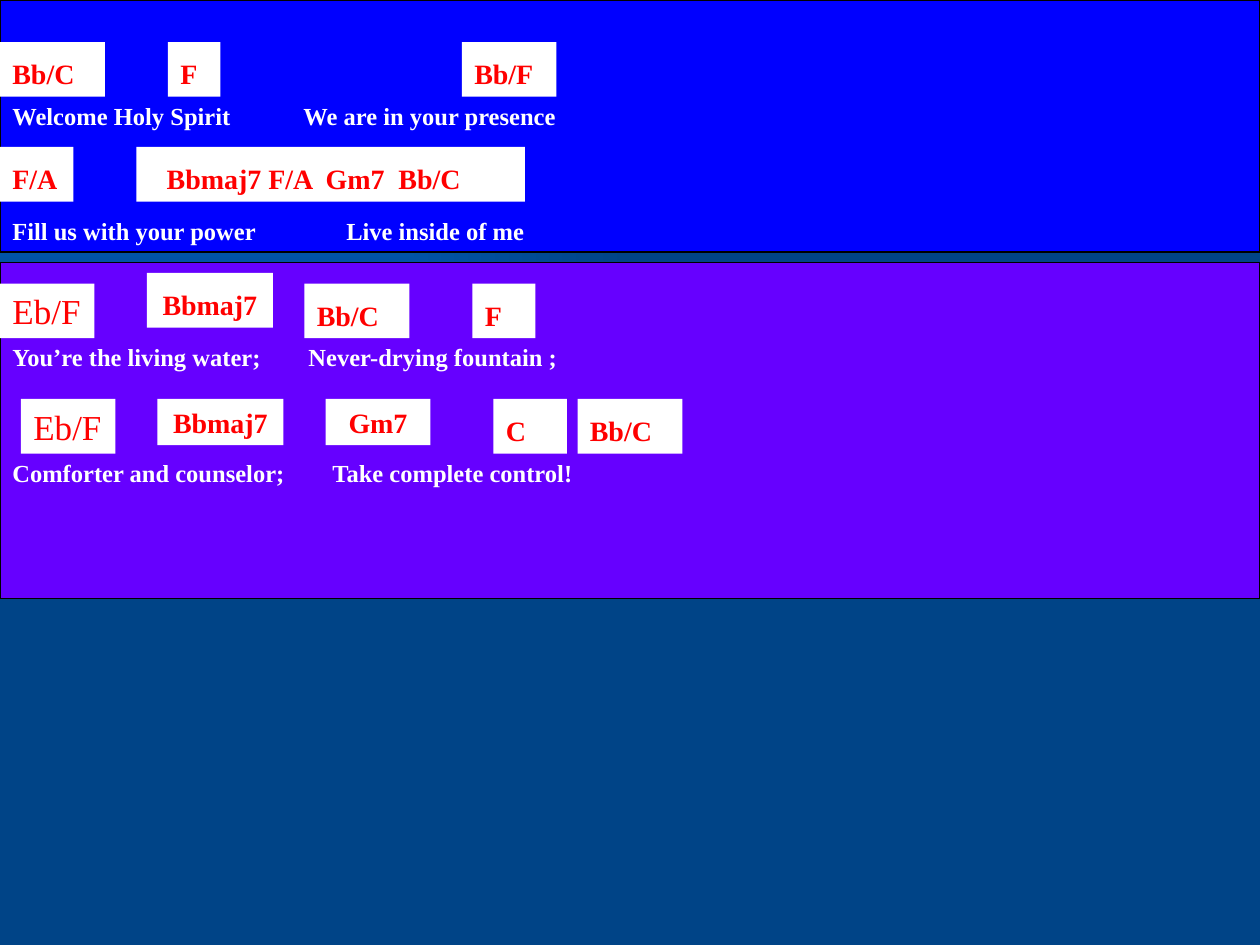
from lxml import etree
from pptx import Presentation, util as u
from pptx.dml.color import RGBColor
from pptx.enum import shapes, text
from pptx.oxml import ns

COLORS = {
    "glow": "0066CC", "deep": "004487", "verse": "0000FF", "chorus": "6600FF",
    "box": "FFFFFF", "chord": "FF0000", "lyric": "FFFFFF", "outline": "000000",
}
COLUMNS, ROWS = 120, 90
TALL, LOW = 5.2, 4.4  # chord box heights in rows


def color(name):
    return RGBColor.from_string(COLORS[name])


def add_xml(parent, tag, **attributes):
    return etree.SubElement(parent, ns.qn(tag), attributes)


class SongSlide:
    font = "Times New Roman"

    def __init__(self, presentation):
        self.slide = presentation.slides.add_slide(presentation.slide_layouts[6])
        self.column = presentation.slide_width / COLUMNS
        self.row = presentation.slide_height / ROWS

    def frame(self, left, top, width, height):
        return (round(left * self.column), round(top * self.row),
                round(width * self.column), round(height * self.row))

    def background(self):
        fill = self.slide.background.fill
        fill.gradient()
        for stop, name, position in zip(fill.gradient_stops, ("glow", "deep"), (0, 1)):
            stop.color.rgb = color(name)
            stop.position = position
        # Turn the linear gradient into one that spreads from the top left corner
        linear = self.slide.element.find(".//" + ns.qn("a:lin"))
        gradient = linear.getparent()
        gradient.remove(linear)
        spread = add_xml(gradient, "a:path", path="rect")
        add_xml(spread, "a:fillToRect", r="100000", b="100000")

    def rectangle(self, frame, fill):
        shape = self.slide.shapes.add_shape(shapes.MSO_SHAPE.RECTANGLE, *self.frame(*frame))
        shape.shadow.inherit = False
        shape.fill.solid()
        shape.fill.fore_color.rgb = color(fill)
        return shape

    def panel(self, top, height, fill):
        shape = self.rectangle((0, top, COLUMNS, height), fill)
        shape.line.color.rgb = color("outline")
        shape.line.width = u.Pt(0.75)

    def set_words(self, shape, words, size, name, bold=True):
        shape.text_frame.word_wrap = True
        paragraph = shape.text_frame.paragraphs[0]
        paragraph.text = words
        for run in paragraph.runs:
            run.font.name, run.font.size, run.font.bold = self.font, u.Pt(size), bold
            run.font.color.rgb = color(name)
        return paragraph

    def lyric(self, top, first, second, stop):
        box = self.slide.shapes.add_textbox(*self.frame(0, top, COLUMNS, 4))
        paragraph = self.set_words(box, f"{first}\t{second}", 14, "lyric")
        properties = paragraph._p.get_or_add_pPr()
        spacing = add_xml(properties, "a:spcBef")
        add_xml(spacing, "a:spcPct", val="50000")
        tabs = add_xml(properties, "a:tabLst")
        add_xml(tabs, "a:tab", pos=str(u.Inches(stop)), algn="l")

    def chord(self, words, left, top, width, height=TALL, size=16, indent=0.1, centred=False):
        shape = self.rectangle((left, top, width, height), "box")
        shape.line.fill.background()
        paragraph = self.set_words(shape, words, size, "chord", bold=size == 16)
        paragraph.alignment = text.PP_ALIGN.CENTER if centred else text.PP_ALIGN.LEFT
        frame = shape.text_frame
        frame.vertical_anchor = text.MSO_ANCHOR.BOTTOM
        frame.margin_left = u.Inches(indent)
        frame.margin_right = u.Inches(indent if centred else 0)


def main():
    presentation = Presentation()
    presentation.slide_width, presentation.slide_height = u.Inches(10), u.Inches(7.5)
    song = SongSlide(presentation)
    song.background()

    # Verse
    song.panel(0, 24, "verse")
    song.chord("Bb/C", 0, 4, 10)
    song.chord("F", 16, 4, 5)
    song.chord("Bb/F", 44, 4, 9)
    song.lyric(9, "Welcome Holy Spirit", "We are in your presence", 2.31)
    song.chord("F/A", 0, 14, 7)
    song.chord("Bbmaj7 F/A  Gm7  Bb/C", 13, 14, 37, indent=0.24)
    song.lyric(20, "Fill us with your power", "Live inside of me", 2.65)

    # Chorus
    song.panel(25, 32, "chorus")
    song.chord("Eb/F", 0, 27, 9, size=20)
    song.chord("Bbmaj7", 14, 26, 12, centred=True)
    song.chord("Bb/C", 29, 27, 10)
    song.chord("F", 45, 27, 6)
    song.lyric(32, "You’re the living water;", "Never-drying fountain ;", 2.35)
    song.chord("Eb/F", 2, 38, 9, size=20)
    song.chord("Bbmaj7", 15, 38, 12, LOW, centred=True)
    song.chord("Gm7", 31, 38, 10, LOW, centred=True)
    song.chord("C", 47, 38, 7)
    song.chord("Bb/C", 55, 38, 10)
    song.lyric(43, "Comforter and counselor;", "Take complete control!", 2.54)

    presentation.save("out.pptx")


if __name__ == "__main__":
    main()
